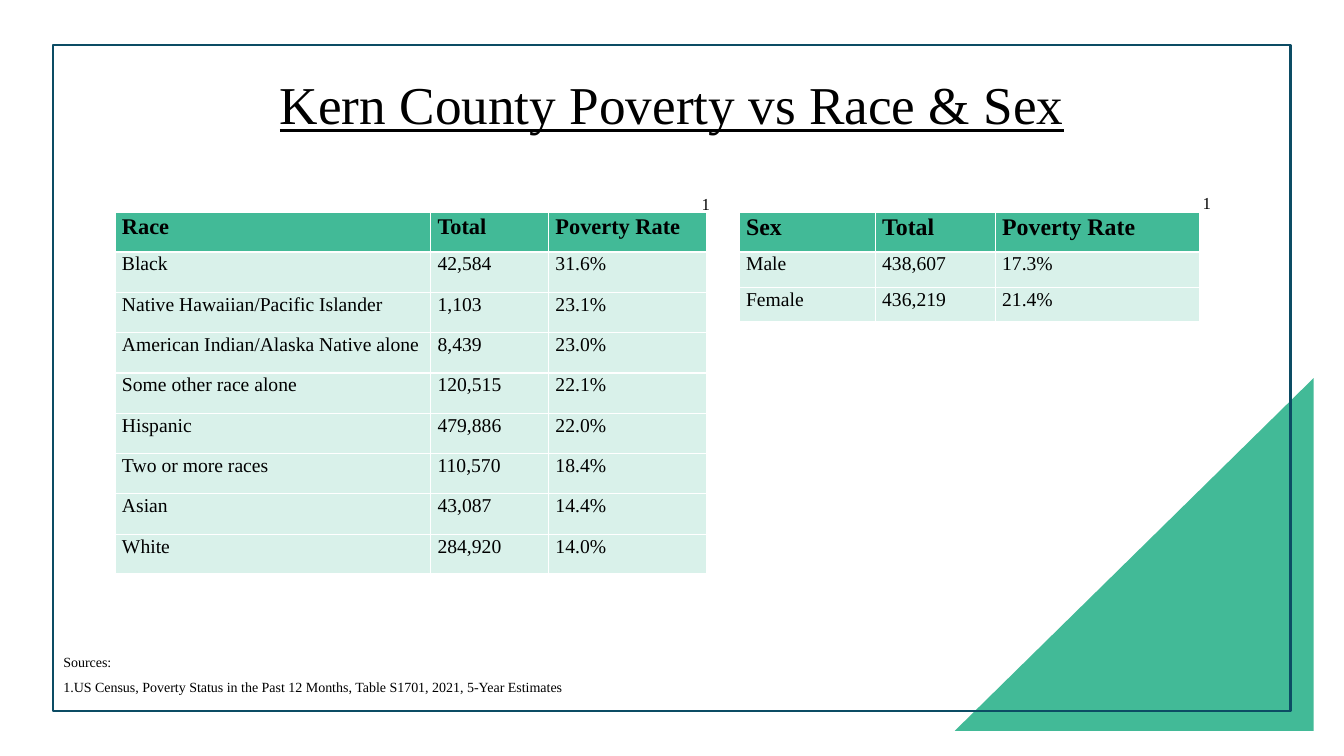
from dataclasses import dataclass

from lxml.etree import SubElement
from pptx import Presentation
from pptx.dml.color import RGBColor
from pptx.enum.shapes import MSO_SHAPE
from pptx.enum.text import MSO_ANCHOR, MSO_AUTO_SIZE, PP_ALIGN
from pptx.oxml.ns import qn
from pptx.slide import Slide
from pptx.table import _Cell
from pptx.text.text import TextFrame
from pptx.util import Emu, Pt

EMU_PER_PX = 9144
FONT = "Times New Roman"
BLACK, WHITE, GREEN, MINT, NAVY = "000000", "FFFFFF", "42BA97", "D9F1EA", "0C4C64"


@dataclass(frozen=True)
class Box:
    left: int
    top: int
    width: int
    height: int

    def emu(self) -> tuple[Emu, ...]:
        return tuple(px(v) for v in (self.left, self.top, self.width, self.height))


@dataclass(frozen=True)
class RateTable:
    left: int
    top: int
    columns: tuple[int, ...]
    row_heights: tuple[int, ...]
    header_size: int
    rows: tuple[tuple[str, str, str], ...]


@dataclass(frozen=True)
class FootnoteMark:
    box: Box
    side_inset: int


RACE = RateTable(114, 211, (313, 117, 157), (39,) + (40,) * 7 + (39,), 16, (
    ("Race", "Total", "Poverty Rate"),
    ("Black", "42,584", "31.6%"),
    ("Native Hawaiian/Pacific Islander", "1,103", "23.1%"),
    ("American Indian/Alaska Native alone", "8,439", "23.0%"),
    ("Some other race alone", "120,515", "22.1%"),
    ("Hispanic", "479,886", "22.0%"),
    ("Two or more races", "110,570", "18.4%"),
    ("Asian", "43,087", "14.4%"),
    ("White", "284,920", "14.0%"),
))
SEX = RateTable(733, 211, (135, 119, 203), (39, 35, 34), 17, (
    ("Sex", "Total", "Poverty Rate"),
    ("Male", "438,607", "17.3%"),
    ("Female", "436,219", "21.4%"),
))
MARKS = (
    FootnoteMark(Box(696, 187, 11, 30), 0),
    FootnoteMark(Box(1183, 186, 20, 30), 10),
)
SOURCES = (
    "Sources:",
    "1.US Census, Poverty Status in the Past 12 Months, Table S1701, 2021, 5-Year Estimates",
)


def px(value: int) -> Emu:
    return Emu(value * EMU_PER_PX)


def color(value: str) -> RGBColor:
    return RGBColor.from_string(value)


def write(frame: TextFrame, *lines: str, size: int, bold: bool = False,
          underline: bool = False, align: PP_ALIGN = PP_ALIGN.LEFT,
          spacing: float | Pt = 1.0, after: int = 0) -> None:
    for index, line in enumerate(lines):
        paragraph = frame.add_paragraph() if index else frame.paragraphs[0]
        paragraph.alignment = align
        paragraph.line_spacing = spacing
        paragraph.space_after = Pt(after)
        run = paragraph.add_run()
        run.text = line
        run.font.name = FONT
        run.font.size = Pt(size)
        run.font.bold = bold
        run.font.underline = underline
        run.font.color.rgb = color(BLACK)


def draw_borders(cell: _Cell) -> None:
    properties = cell._tc.get_or_add_tcPr()
    for side in ("a:lnL", "a:lnR", "a:lnT", "a:lnB"):
        border = SubElement(properties, qn(side), w=str(Pt(1)))
        fill = SubElement(border, qn("a:solidFill"))
        SubElement(fill, qn("a:srgbClr"), val=WHITE)


def draw_table(slide: Slide, data: RateTable) -> None:
    box = Box(data.left, data.top, sum(data.columns), sum(data.row_heights))
    table = slide.shapes.add_table(len(data.rows), len(data.columns), *box.emu()).table
    table.horz_banding = False
    for column, width in zip(table.columns, data.columns):
        column.width = px(width)
    for row_index, (row, height) in enumerate(zip(table.rows, data.row_heights)):
        row.height = px(height)
        header = row_index == 0
        for cell, text in zip(row.cells, data.rows[row_index]):
            draw_borders(cell)
            cell.fill.solid()
            cell.fill.fore_color.rgb = color(GREEN if header else MINT)
            cell.margin_left = cell.margin_right = px(7)
            cell.margin_top = cell.margin_bottom = 0
            write(cell.text_frame, text, size=data.header_size if header else 14,
                  bold=header, spacing=1.07, after=8)


def draw_title(slide: Slide) -> None:
    title = slide.shapes.title
    title.left, title.top, title.width, title.height = Box(8, 34, 1317, 145).emu()
    title.text_frame.auto_size = MSO_AUTO_SIZE.NONE
    title.text_frame.vertical_anchor = MSO_ANCHOR.MIDDLE
    write(title.text_frame, "Kern County Poverty vs Race & Sex", size=38,
          underline=True, align=PP_ALIGN.CENTER, spacing=0.9)


def draw_corner(slide: Slide) -> None:
    corner = slide.shapes.add_shape(MSO_SHAPE.RIGHT_TRIANGLE, *Box(950, 372, 350, 356).emu())
    corner.rotation = 270
    corner.shadow.inherit = False
    corner.fill.solid()
    corner.fill.fore_color.rgb = color(GREEN)
    corner.line.fill.background()


def draw_border(slide: Slide) -> None:
    border = slide.shapes.add_shape(MSO_SHAPE.RECTANGLE, *Box(53, 45, 1227, 660).emu())
    border.shadow.inherit = False
    border.fill.background()
    border.line.color.rgb = color(NAVY)
    border.line.width = Pt(1.5)


def draw_sources(slide: Slide) -> None:
    frame = slide.shapes.add_textbox(*Box(53, 646, 946, 49).emu()).text_frame
    frame.word_wrap = True
    write(frame, *SOURCES, size=10, spacing=Pt(10), after=8)


def draw_mark(slide: Slide, mark: FootnoteMark) -> None:
    frame = slide.shapes.add_textbox(*mark.box.emu()).text_frame
    frame.word_wrap = False
    frame.margin_left = frame.margin_right = px(mark.side_inset)
    write(frame, "1", size=12)


def main() -> None:
    deck = Presentation()
    deck.slide_width, deck.slide_height = px(1333), px(750)
    slide = deck.slides.add_slide(deck.slide_layouts[5])
    draw_corner(slide)
    draw_title(slide)
    for data in (RACE, SEX):
        draw_table(slide, data)
    draw_sources(slide)
    draw_border(slide)
    for mark in MARKS:
        draw_mark(slide, mark)
    deck.save("out.pptx")


if __name__ == "__main__":
    main()
